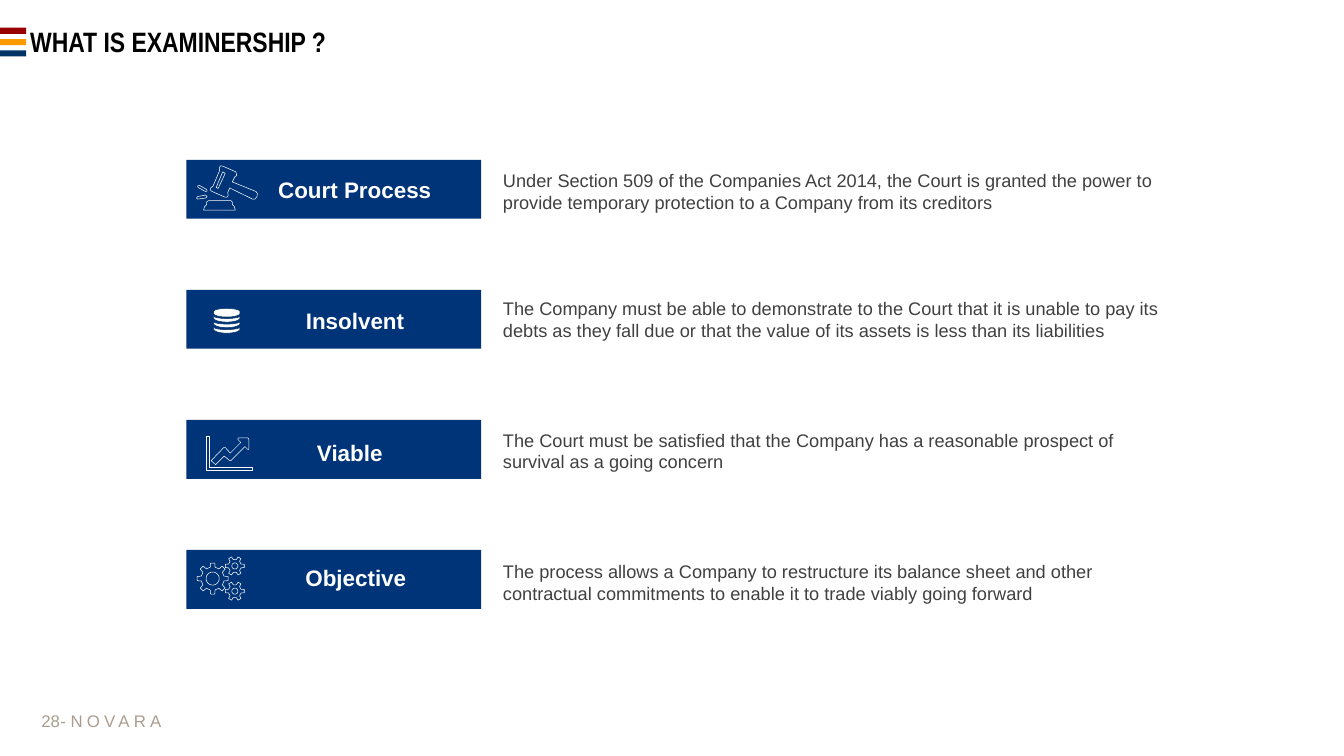
from math import cos, pi, sin

from pptx import Presentation
from pptx.dml.color import RGBColor
from pptx.enum.shapes import MSO_SHAPE as SHAPE
from pptx.enum.text import MSO_ANCHOR as ANCHOR, MSO_AUTO_SIZE as AUTO, PP_ALIGN as ALIGN
from pptx.util import Inches, Pt

NAVY, WHITE, TAUPE, GREY = "003478", "FFFFFF", "AA9C8F", "404040"
BAR_LEFT, BAR_TOP, BAR_PITCH, BAR_W, BAR_H = 3.7, 3.17, 2.58, 5.85, 1.17
BODY_LEFT = 9.98

STRIPES = ["990000", "FF9900", "003366"]

ROWS = [
    ("Court Process", (5.52, 3.5, 3.06), (3.36, 14.01),
     "Under Section 509 of the Companies Act 2014, the Court is granted the power to "
     "provide temporary protection to a Company from its creditors"),
    ("Insolvent", (6.07, 6.09, 1.97), (5.9, 13.22),
     "The Company must be able to demonstrate to the Court that it is unable to pay its "
     "debts as they fall due or that the value of its assets is less than its liabilities"),
    ("Viable", (6.29, 8.71, 1.31), (8.51, 13.22),
     "The Court must be satisfied that the Company has a reasonable prospect of "
     "survival as a going concern"),
    ("Objective", (6.06, 11.2, 2.02), (11.12, 12.49),
     "The process allows a Company to restructure its balance sheet and other "
     "contractual commitments to enable it to trade viably going forward"),
]

GAVEL_BASE = [(4.04, 4.17), (4.67, 4.17), (4.65, 4.1), (4.61, 4.06), (4.61, 4.01), (4.58, 3.98),
              (4.14, 3.98), (4.1, 4.01), (4.1, 4.06), (4.06, 4.1)]
GAVEL_SPARKS = [
    [(4.11, 3.9), (4.08, 3.87), (3.92, 3.9), (3.9, 3.93), (3.92, 3.95), (4.08, 3.93)],
    [(3.93, 3.72), (4.08, 3.8), (4.11, 3.79), (4.1, 3.76), (3.96, 3.68), (3.92, 3.69)],
]
GAVEL_HEAD = [(4.53, 3.88), (4.52, 3.82), (4.56, 3.73), (5.01, 3.95), (5.06, 3.95), (5.1, 3.9),
              (5.11, 3.84), (5.08, 3.8), (4.61, 3.61), (4.66, 3.51), (4.7, 3.48), (4.68, 3.41),
              (4.43, 3.3), (4.38, 3.29), (4.35, 3.33), (4.36, 3.38), (4.23, 3.69), (4.18, 3.73),
              (4.18, 3.78), (4.21, 3.8), (4.46, 3.91), (4.51, 3.91)]
GAVEL_SLOT = [(4.33, 3.74), (4.29, 3.72), (4.42, 3.41), (4.47, 3.44)]
CHART_AXES = [(5, 9.33), (4.09, 9.33), (4.09, 8.65), (4.15, 8.65), (4.15, 9.27), (5, 9.27)]
CHART_ARROW = [(4.94, 8.91), (4.92, 8.92), (4.86, 8.86), (4.58, 9.14), (4.56, 9.14), (4.45, 9.05),
               (4.28, 9.22), (4.19, 9.14), (4.44, 8.88), (4.47, 8.88), (4.57, 8.99), (4.78, 8.78),
               (4.72, 8.72), (4.73, 8.69), (4.92, 8.69), (4.94, 8.72)]


def rgb(color):
    """Turn a hex string into a colour."""
    return RGBColor.from_string(color)


def paint(sp, fill=None, line=None):
    """Set fill and line of a shape and drop its shadow."""
    sp.shadow.inherit = False
    if fill:
        sp.fill.solid()
        sp.fill.fore_color.rgb = rgb(fill)
    else:
        sp.fill.background()
    if line:
        sp.line.color.rgb = rgb(line)
        sp.line.width = Pt(0.75)
    else:
        sp.line.fill.background()


def add_bar(s, x, y, w, h, color):
    """Add a plain filled rectangle."""
    paint(s.shapes.add_shape(SHAPE.RECTANGLE, Inches(x), Inches(y), Inches(w), Inches(h)), color)


def add_text(s, text, x, y, w, h, size, color, font="Arial", bold=False, align=ALIGN.LEFT,
             anchor=ANCHOR.TOP, wrap=True, insets=(0, 0), grow=False, spacing=None, tracking=None):
    """Add a text box; tracking widens the letters after the first space."""
    tf = s.shapes.add_textbox(Inches(x), Inches(y), Inches(w), Inches(h)).text_frame
    tf.margin_left = tf.margin_right = Inches(insets[0])
    tf.margin_top = tf.margin_bottom = Inches(insets[1])
    tf.word_wrap, tf.vertical_anchor = wrap, anchor
    tf.auto_size = AUTO.SHAPE_TO_FIT_TEXT if grow else AUTO.NONE
    p = tf.paragraphs[0]
    p.alignment, p.line_spacing = align, spacing
    lead, gap, rest = text.partition(" ") if tracking else (text, "", "")
    for part, spread in ((lead + gap, None), (rest, tracking)):
        if part:
            r = p.add_run()
            r.text = part
            r.font.name, r.font.size, r.font.bold = font, Pt(size), bold
            r.font.color.rgb = rgb(color)
            if spread:
                r.font._element.set("spc", str(spread * 100))


def add_outline(s, contours, fill=None, line=WHITE):
    """Add one freeform made of closed contours."""
    scaled = [[(Inches(x), Inches(y)) for x, y in contour] for contour in contours]
    builder = s.shapes.build_freeform(*scaled[0][0])
    builder.add_line_segments(scaled[0][1:], close=True)
    for contour in scaled[1:]:
        builder.move_to(*contour[0])
        builder.add_line_segments(contour[1:], close=True)
    paint(builder.convert_to_shape(), fill, line)


def arc(cx, cy, rx, ry, start=0, end=2 * pi, steps=24):
    """Return points along an elliptical arc."""
    angles = [start + (end - start) * i / steps for i in range(steps + 1)]
    return [(cx + rx * cos(a), cy + ry * sin(a)) for a in angles]


def gear(cx, cy, radius, root, teeth, hole):
    """Return the toothed rim and the hole of a gear."""
    step = 2 * pi / teeth
    profile = [(-0.27, root), (-0.17, radius), (0.17, radius), (0.27, root)]
    rim = [(cx + r * cos((i + t) * step), cy + r * sin((i + t) * step))
           for i in range(teeth) for t, r in profile]
    return [rim, arc(cx, cy, hole, hole)]


def add_icons(s):
    """Draw the gavel, coin stack, growth chart and gears."""
    for contour in [GAVEL_BASE, *GAVEL_SPARKS]:
        add_outline(s, [contour])
    add_outline(s, [GAVEL_HEAD, GAVEL_SLOT])
    cx, rx = 4.5, 0.26
    coins = [arc(cx, 6.18, rx, 0.06, 0, -pi) + arc(cx, 6.22, rx, 0.07, pi, 0)]
    for i in range(3):
        y = 6.27 + 0.11 * i
        coins.append(arc(cx, y, rx, 0.05, 0, pi) + arc(cx, y + 0.04, rx, 0.08, pi, 0))
    add_outline(s, coins, WHITE, "003366")
    add_outline(s, [CHART_AXES, CHART_ARROW])
    gears = gear(4.22, 11.48, 0.31, 0.23, 8, 0.13)
    for y in (11.23, 11.73):
        gears += gear(4.66, y, 0.19, 0.13, 6, 0.06)
    add_outline(s, gears)


def main():
    """Build the slide and save it."""
    prs = Presentation()
    prs.slide_width, prs.slide_height = Inches(26.67), Inches(15)
    s = prs.slides.add_slide(prs.slide_layouts[6])
    for i, color in enumerate(STRIPES):
        add_bar(s, 0, 0.55 + 0.225 * i, 0.52, 0.12, color)
    add_text(s, "WHAT IS EXAMINERSHIP ?", 0.5, 0.46, 25.67, 0.79, 40, "000000", font="Arial Narrow",
             bold=True, anchor=ANCHOR.MIDDLE, insets=(0.1, 0.05), spacing=0.9)
    add_text(s, "28", 0.44, 13.9, 0.75, 0.8, 24, TAUPE, align=ALIGN.RIGHT,
             anchor=ANCHOR.MIDDLE, insets=(0, 0.05))
    add_text(s, "- NOVARA", 1.1, 13.9, 2.29, 0.8, 24, TAUPE, anchor=ANCHOR.MIDDLE,
             wrap=False, insets=(0.1, 0.05), tracking=6)
    for i, (label, (x, y, w), (body_y, body_w), body) in enumerate(ROWS):
        add_bar(s, BAR_LEFT, BAR_TOP + BAR_PITCH * i, BAR_W, BAR_H, NAVY)
        add_text(s, label, x, y, w, 0.54, 32, WHITE, bold=True, wrap=False, grow=True)
        add_text(s, body, BODY_LEFT, body_y, body_w, 0.88, 26, GREY, grow=True)
    add_icons(s)
    prs.save("out.pptx")


if __name__ == "__main__":
    main()
